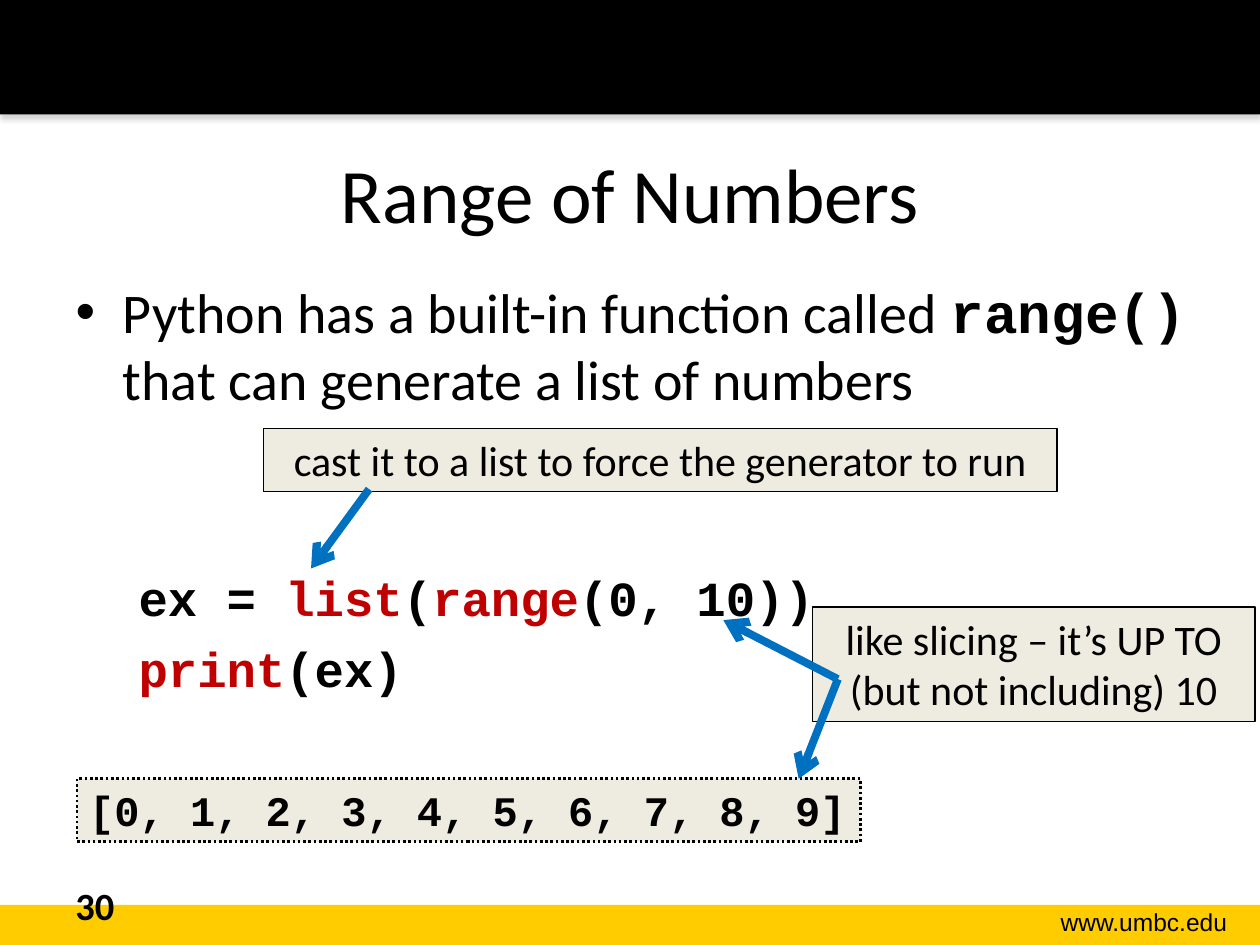
from lxml.etree import SubElement
from pptx import Presentation
from pptx.dml.color import RGBColor
from pptx.enum.dml import MSO_LINE
from pptx.enum.shapes import MSO_CONNECTOR, MSO_SHAPE
from pptx.enum.text import MSO_ANCHOR, MSO_AUTO_SIZE as AutoSize, PP_ALIGN as Align
from pptx.oxml.ns import qn
from pptx.util import Cm, Pt

COLORS = {
    "black": "000000",
    "gold": "FFCC00",
    "beige": "EEECE1",
    "blue": "0070C0",
    "keyword": "C00000",
    "shadow": "808080",
}
SANS, MONO, FOOTER = "Calibri", "Courier New", "Arial"


class SlideBuilder:
    """Holds the current slide and its style; lengths are in centimetres."""

    def __init__(self, slide):
        self.slide = slide

    def color(self, name):
        return RGBColor.from_string(COLORS[name])

    def style(self, font, size, face, color="black", bold=False):
        font.name, font.size, font.bold = face, Pt(size), bold
        font.color.rgb = self.color(color)

    def place(self, shape, box):
        shape.left, shape.top, shape.width, shape.height = map(Cm, box)

    def title(self, text, box):
        title = self.slide.shapes.title
        self.place(title, box)
        title.text_frame.text = text
        title.text_frame.vertical_anchor = MSO_ANCHOR.MIDDLE
        title.text_frame.paragraphs[0].alignment = Align.CENTER
        self.style(title.text_frame.paragraphs[0].font, 44, SANS)

    def body(self, box):
        body = self.slide.placeholders[1]
        self.place(body, box)
        body.text_frame.auto_size = AutoSize.NONE
        return body.text_frame

    def bullet(self, paragraph, parts):
        """Fill a bullet from (text, is_code) parts."""
        paragraph.space_before = Pt(0)
        for text, is_code in parts:
            run = paragraph.add_run()
            run.text = text
            self.style(run.font, 32, MONO if is_code else SANS, bold=is_code)

    def code_line(self, paragraph, parts, space_before):
        """Fill an unbulleted code line from (text, color) parts."""
        paragraph.level = 1
        paragraph.space_before = Pt(space_before)
        properties = paragraph._p.get_or_add_pPr()
        properties.set("marL", str(Cm(1.27)))
        properties.set("indent", "0")
        SubElement(properties, qn("a:buNone"))
        for text, color in parts:
            run = paragraph.add_run()
            run.text = text
            self.style(run.font, 28, MONO, color, bold=True)

    def band(self, box, color):
        band = self.slide.shapes.add_shape(MSO_SHAPE.RECTANGLE, *map(Cm, box))
        band.shadow.inherit = False
        band.fill.solid()
        band.fill.fore_color.rgb = self.color(color)
        band.line.fill.background()
        return band

    def drop_shadow(self, shape):
        effects = shape._element.spPr.find(qn("a:effectLst"))
        shadow = SubElement(effects, qn("a:outerShdw"), blurRad=str(Pt(3.1)),
                            dist=str(Pt(1.8)), dir="5400000", rotWithShape="0")
        tint = SubElement(shadow, qn("a:srgbClr"), val=COLORS["shadow"])
        SubElement(tint, qn("a:alpha"), val="35000")

    def fill_text(self, shape, text, size, face, align, bold=False):
        frame = shape.text_frame
        frame.word_wrap = True
        frame.vertical_anchor = MSO_ANCHOR.TOP
        frame.text = text
        frame.paragraphs[0].alignment = align
        self.style(frame.paragraphs[0].font, size, face, bold=bold)

    def label(self, text, box, size, face=SANS, align=Align.LEFT, bold=False):
        label = self.slide.shapes.add_textbox(*map(Cm, box))
        self.fill_text(label, text, size, face, align, bold)

    def callout(self, text, box, face=SANS, align=Align.CENTER, bold=False,
                width=0.75, dash=None):
        callout = self.band(box, "beige")
        callout.line.color.rgb = self.color("black")
        callout.line.width = Pt(width)
        if dash:
            callout.line.dash_style = dash
        self.fill_text(callout, text, 24, face, align, bold)
        callout.text_frame.auto_size = AutoSize.SHAPE_TO_FIT_TEXT

    def arrow(self, start, end):
        arrow = self.slide.shapes.add_connector(
            MSO_CONNECTOR.STRAIGHT, *map(Cm, start + end))
        arrow.line.color.rgb = self.color("blue")
        arrow.line.width = Pt(4.5)
        properties = arrow._element.spPr
        SubElement(properties.find(qn("a:ln")), qn("a:tailEnd"), type="arrow")
        SubElement(properties, qn("a:effectLst"))


def main():
    deck = Presentation()
    deck.slide_width, deck.slide_height = Cm(25.4), Cm(19.05)
    page = SlideBuilder(deck.slides.add_slide(deck.slide_layouts[1]))

    page.band((0, 18.24, 25.4, 0.81), "gold")
    page.drop_shadow(page.band((0, 0, 25.4, 2.31), "black"))
    page.label("www.umbc.edu", (19.94, 18.16, 5.05, 0.86), 14, FOOTER, Align.RIGHT)

    page.title("Range of Numbers", (1.27, 2.29, 22.86, 3.18))
    body = page.body((1.27, 5.46, 23.37, 11.56))
    page.bullet(body.paragraphs[0], [
        ("Python has a built-in function called ", False),
        ("range()", True),
        (" that can generate a list of numbers", False),
    ])
    page.code_line(body.add_paragraph(), [
        ("ex = ", "black"), ("list", "keyword"), ("(", "black"),
        ("range", "keyword"), ("(0, 10))", "black"),
    ], space_before=89)
    page.code_line(body.add_paragraph(), [
        ("print", "keyword"), ("(ex)", "black"),
    ], space_before=7)
    page.label("30", (1.27, 17.65, 5.92, 1.02), 22, bold=True)

    page.callout("[0, 1, 2, 3, 4, 5, 6, 7, 8, 9]", (1.55, 15.7, 15.8, 1.27), MONO,
                 Align.LEFT, bold=True, width=1.5, dash=MSO_LINE.ROUND_DOT)
    page.callout("cast it to a list to force the generator to run",
                 (5.31, 8.64, 16, 1.27))
    page.arrow((7.44, 9.86), (6.27, 11.46))
    page.callout("like slicing – it’s UP TO (but not including) 10",
                 (16.38, 12.24, 8.92, 2.31))
    slicing_note = (16.89, 13.69)
    for target in ((14.58, 12.5), (16.1, 15.7)):
        page.arrow(slicing_note, target)

    deck.save("out.pptx")


if __name__ == "__main__":
    main()
